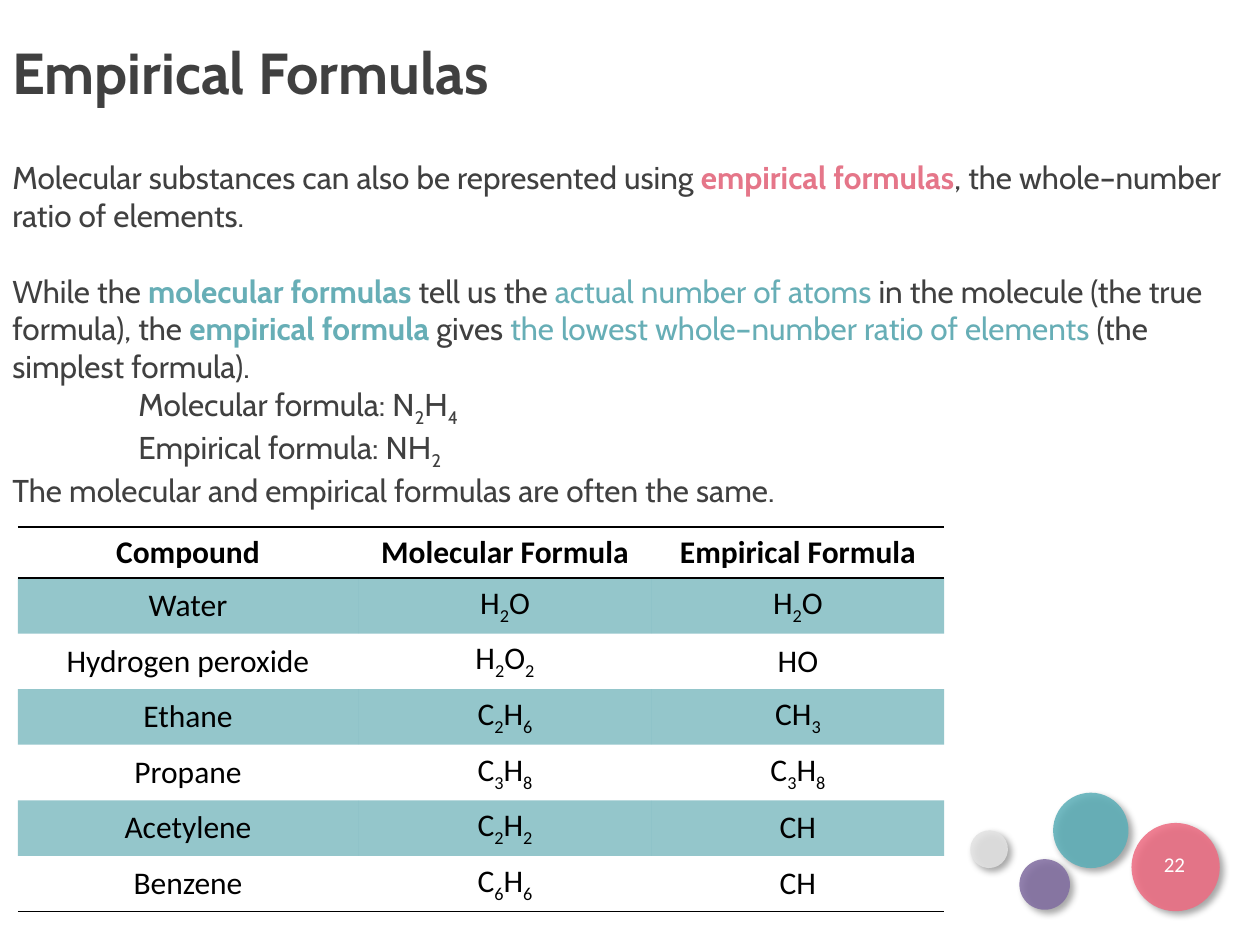
from itertools import groupby

from lxml.etree import SubElement
from pptx import Presentation
from pptx.dml.color import RGBColor
from pptx.enum.shapes import MSO_SHAPE
from pptx.enum.text import MSO_ANCHOR, MSO_AUTO_SIZE, PP_ALIGN
from pptx.oxml import parse_xml
from pptx.oxml.ns import nsdecls, qn
from pptx.util import Cm, Pt


class Theme:
    ink, black, white = "404040", "000000", "FFFFFF"
    teal, rose = "67AEB6", "E57689"
    bubbles = "E3E3E3", "816DA1", "5CAFB8", "EE6C82"
    title, body, number = 33, 18, 12
    heading_font, table_font = "Cabin", "Calibri"
    no_grid = "{2D5ABB26-0587-4C30-8999-92F81FD0307C}"


def write(p, text, size=Theme.body, font=Theme.heading_font, color=Theme.ink,
          bold=False, formula=False, align=None):
    """Add text to a paragraph; in a formula, digits become subscripts."""
    if align is not None:
        p.alignment = align
    parts = ["".join(g) for _, g in groupby(text, str.isdigit)] if formula else [text]
    for part in parts:
        r = p.add_run()
        r.text = part
        r.font.size, r.font.name, r.font.bold = Pt(size), font, bold
        r.font.color.rgb = RGBColor.from_string(color)
        if formula and part.isdigit():
            r.font._element.set("baseline", "-25000")


def set_alpha(fill, percent):
    color = fill._xPr.find(qn("a:solidFill"))[0]
    SubElement(color, qn("a:alpha"), val=str(percent * 1000))


prs = Presentation()
prs.slide_width, prs.slide_height = Cm(25.4), Cm(19.05)
s = prs.slides.add_slide(prs.slide_layouts[6])

# Bubbles in the corner: left, top, diameter, rotation
bubbles = [(19.56, 16.74, 0.76, 2.8), (20.55, 17.32, 1.02, 0),
           (21.23, 15.98, 1.52, 0), (22.81, 16.59, 1.78, 0)]
for (x, y, d, turn), color in zip(bubbles, Theme.bubbles):
    sp = s.shapes.add_shape(MSO_SHAPE.OVAL, Cm(x), Cm(y), Cm(d), Cm(d))
    sp.rotation = turn
    sp.fill.solid()
    sp.fill.fore_color.rgb = RGBColor.from_string(color)
    set_alpha(sp.fill, 86)
    sp.line.fill.background()
    sp._element.spPr.append(parse_xml(
        f'<a:effectLst {nsdecls("a")}><a:outerShdw blurRad="{Pt(4)}" dist="{Pt(3)}" '
        f'dir="2700000"><a:srgbClr val="{Theme.black}"><a:alpha val="40000"/>'
        '</a:srgbClr></a:outerShdw></a:effectLst>'))

# Slide number
tf = s.shapes.add_textbox(Cm(23.19), Cm(16.92), Cm(0.97), Cm(1.02)).text_frame
tf.margin_left = tf.margin_right = 0
tf.word_wrap, tf.vertical_anchor = True, MSO_ANCHOR.MIDDLE
write(tf.paragraphs[0], "22", size=Theme.number, font=Theme.table_font,
      color=Theme.white, align=PP_ALIGN.CENTER)

# Body text: each paragraph is a list of (text, format)
key = dict(color=Theme.teal, bold=True)
accent = dict(color=Theme.teal)
formula = dict(formula=True)
body = [
    [("Molecular substances can also be represented using ", {}),
     ("empirical formulas", dict(color=Theme.rose, bold=True)),
     (", the whole–number ratio of elements.", {})],
    [("While the ", {}), ("molecular formulas ", key), ("tell us the ", {}),
     ("actual number of atoms ", accent),
     ("in the molecule (the true formula), the ", {}),
     ("empirical formula ", key), ("gives ", {}),
     ("the lowest whole–number ratio of elements ", accent),
     ("(the simplest formula).", {})],
    [("Molecular formula: N2H4", formula)],
    [("Empirical formula: NH2", formula)],
    [("The molecular and empirical formulas are often the same.", {})],
]
tf = s.shapes.add_textbox(0, Cm(3.07), Cm(25.4), Cm(7.19)).text_frame
tf.word_wrap, tf.auto_size = True, MSO_AUTO_SIZE.SHAPE_TO_FIT_TEXT
for i, runs in enumerate(body):
    p = tf.add_paragraph() if i else tf.paragraphs[0]
    for text, style in runs:
        write(p, text, **style)
        if style is formula:
            p._p.get_or_add_pPr().set("marL", str(Cm(2.54)))
tf.paragraphs[1].space_before = Pt(21.5)

# Title
tf = s.shapes.add_textbox(0, Cm(0.76), Cm(25.4), Cm(1.52)).text_frame
tf.word_wrap, tf.auto_size = True, MSO_AUTO_SIZE.SHAPE_TO_FIT_TEXT
tf.vertical_anchor = MSO_ANCHOR.MIDDLE
tf.paragraphs[0].line_spacing = 0.9
write(tf.paragraphs[0], "Empirical Formulas", size=Theme.title, bold=True)

# Table of compounds
rows = [
    ("Compound", "Molecular Formula", "Empirical Formula"),
    ("Water", "H2O", "H2O"),
    ("Hydrogen peroxide", "H2O2", "HO"),
    ("Ethane", "C2H6", "CH3"),
    ("Propane", "C3H8", "C3H8"),
    ("Acetylene", "C2H2", "CH"),
    ("Benzene", "C6H6", "CH"),
]
widths = [6.86, 5.92, 5.89]
row_height = 1.03
table = s.shapes.add_table(len(rows), len(widths), Cm(0.36), Cm(10.62),
                           Cm(sum(widths)), Cm(row_height * len(rows))).table
table.first_row = table.horz_banding = False
table._tbl.tblPr.find(qn("a:tableStyleId")).text = Theme.no_grid
for column, width in zip(table.columns, widths):
    column.width = Cm(width)
for i, row in enumerate(rows):
    table.rows[i].height = Cm(row_height)
    edges = {0: ("lnT", "lnB"), len(rows) - 1: ("lnB",)}.get(i, ())
    for j, text in enumerate(row):
        cell = table.cell(i, j)
        cell.vertical_anchor = MSO_ANCHOR.MIDDLE
        write(cell.text_frame.paragraphs[0], text, font=Theme.table_font,
              color=Theme.black, bold=i == 0, formula=True, align=PP_ALIGN.CENTER)
        for edge in edges:
            cell._tc.get_or_add_tcPr().append(parse_xml(
                f'<a:{edge} {nsdecls("a")} w="{Pt(1)}"><a:solidFill>'
                f'<a:srgbClr val="{Theme.black}"/></a:solidFill></a:{edge}>'))
        if i % 2:
            cell.fill.solid()
            cell.fill.fore_color.rgb = RGBColor.from_string(Theme.teal)
            set_alpha(cell.fill, 70)
        else:
            cell.fill.background()

prs.save("out.pptx")
